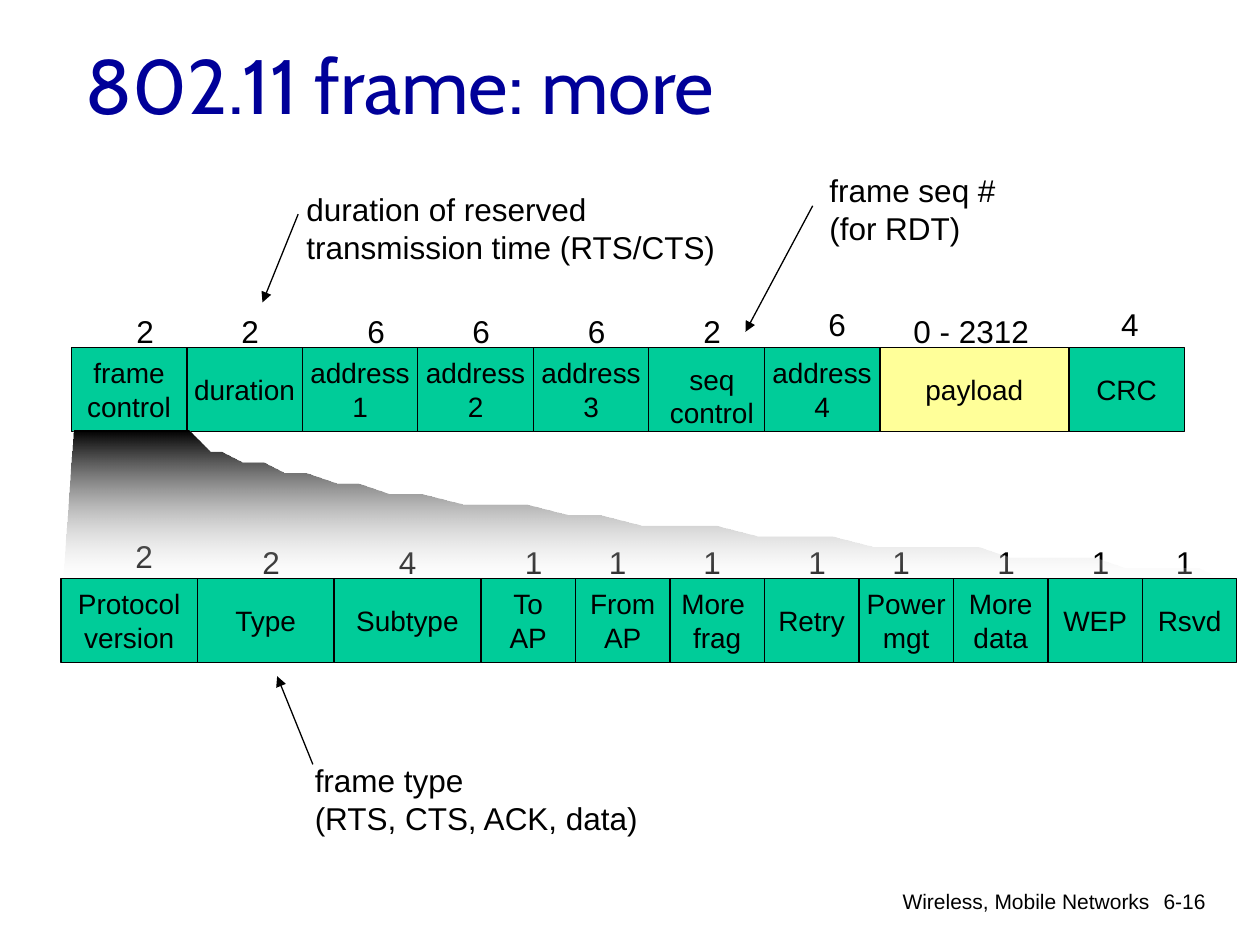
from collections import namedtuple
from dataclasses import dataclass

import lxml.etree
import pptx
import pptx.dml.color
import pptx.enum.shapes
import pptx.enum.text
import pptx.oxml
import pptx.oxml.ns
import pptx.util

ALIGN = pptx.enum.text.PP_ALIGN
ANCHOR = pptx.enum.text.MSO_ANCHOR


@dataclass(frozen=True)
class Theme:
    ink: str = "000000"
    paper: str = "FFFFFF"
    title: str = "000099"
    field: str = "00CC99"
    payload: str = "FFFF99"
    body_font: str = "Arial"
    title_font: str = "Cabin"
    title_size: int = 44
    note_size: int = 18
    field_size: int = 16
    footer_size: int = 12
    line_width: float = 0.75


THEME = Theme()
UNIT = 1 / 12  # the slide is a grid of 120 columns by 90 rows
COLUMNS, ROWS = 120, 90
FIELD_ROWS = 8

Box = namedtuple("Box", "left top width height")
# shift and lift move the octet count away from the middle of its field
Field = namedtuple("Field", "name columns count shift lift", defaults=(0.5, 0))

FRAME_FIELDS = [
    Field("frame\ncontrol", 11, "2", 1.5),
    Field("duration", 11, "2"),
    Field("address\n1", 11, "6", 1.5),
    Field("address\n2", 11, "6"),
    Field("address\n3", 11, "6"),
    Field("seq\ncontrol", 11, "2"),
    Field("address\n4", 11, "6", 1.4, 0.6),
    Field("payload", 18, "0 - 2312", -0.3),
    Field("CRC", 11, "4", 0.3, 0.6),
]
CONTROL_FIELDS = [
    Field("Protocol\nversion", 13, "2", 1.4, 0.5),
    Field("Type", 13, "2"),
    Field("Subtype", 14, "4", 0),
    Field("To\nAP", 9, "1"),
    Field("From\nAP", 9, "1", -0.5),
    Field("More \nfrag", 9, "1", -0.5),
    Field("Retry", 9, "1"),
    Field("Power\nmgt", 9, "1", -0.5),
    Field("More\ndata", 9, "1"),
    Field("WEP", 9, "1"),
    Field("Rsvd", 9, "1", -0.5),
]


def grid(units):
    return pptx.util.Inches(units * UNIT)


def colour(value):
    return pptx.dml.color.RGBColor.from_string(value)


def write(shape, text, size, align=ALIGN.LEFT, anchor=ANCHOR.TOP,
          font=THEME.body_font, ink=THEME.ink, wrap=False):
    frame = shape.text_frame
    frame.text = text
    frame.word_wrap = wrap
    frame.vertical_anchor = anchor
    for para in frame.paragraphs:
        para.alignment = align
        for span in para.runs:
            span.font.size = pptx.util.Pt(size)
            span.font.name = font
            span.font.color.rgb = colour(ink)


def add_text(page, box, text, size, **style):
    write(page.shapes.add_textbox(*map(grid, box)), text, size, **style)


def add_arrow(page, start, end):
    line = page.shapes.add_connector(
        pptx.enum.shapes.MSO_CONNECTOR.STRAIGHT, *map(grid, start + end))
    line.line.color.rgb = colour(THEME.ink)
    line.line.width = pptx.util.Pt(THEME.line_width)
    head = lxml.etree.SubElement(line.line._get_or_add_ln(), pptx.oxml.ns.qn("a:tailEnd"))
    head.set("type", "triangle")
    lxml.etree.SubElement(line._element.spPr, pptx.oxml.ns.qn("a:effectLst"))


def add_field(page, box, field):
    cell = page.shapes.add_shape(
        pptx.enum.shapes.MSO_SHAPE.RECTANGLE, *map(grid, box))
    cell.shadow.inherit = False
    cell.fill.solid()
    cell.fill.fore_color.rgb = colour(
        THEME.payload if field.name == "payload" else THEME.field)
    cell.line.color.rgb = colour(THEME.ink)
    cell.line.width = pptx.util.Pt(THEME.line_width)
    if field.name.startswith("seq"):  # this name stands in its own, lower box
        name_box = Box(box.left + 0.8, box.top + 0.8, 10.4, 7.7)
        add_text(page, name_box, field.name, THEME.field_size, align=ALIGN.CENTER)
    else:
        write(cell, field.name, THEME.field_size, ALIGN.CENTER, ANCHOR.MIDDLE)


def add_field_row(page, left, top, fields):
    """Fields side by side, each with its size above it."""
    for field in fields:
        box = Box(left, top, field.columns, FIELD_ROWS)
        add_field(page, box, field)
        width = 4 if len(field.count) == 1 else 13.4
        middle = left + field.columns / 2 + field.shift
        count_box = Box(middle - width / 2, top - 4 - field.lift, width, 4.8)
        add_text(page, count_box, field.count, THEME.note_size, align=ALIGN.CENTER)
        left += field.columns


def curve(start, pull_1, pull_2, end, steps=40):
    """Points of a cubic curve after its start."""
    for step in range(1, steps + 1):
        t = step / steps
        weights = ((1 - t) ** 3, 3 * t * (1 - t) ** 2, 3 * t * t * (1 - t), t ** 3)
        yield tuple(sum(w * p[axis] for w, p in zip(weights, (start, pull_1, pull_2, end)))
                    for axis in (0, 1))


def add_zoom_fan(page, box):
    """Fading fan from the control field to its enlarged row."""
    def at(across, down):
        return box.left + across * box.width, box.top + down * box.height

    start, low_left, low_right = at(0.01, 0), at(0, 0.98), at(0.98, 1)
    neck = at(0.106, 0)
    points = [low_left, low_right,
              *curve(low_right, at(1, 0.83), at(0.18, 0.61), neck)]
    builder = page.shapes.build_freeform(*start, scale=grid(1))
    builder.add_line_segments(points, close=True)
    fan = builder.convert_to_shape()
    fan.shadow.inherit = False
    fan.line.fill.background()
    fan.fill.gradient()
    fan.fill.gradient_angle = 270
    for stop, value, place in zip(fan.fill.gradient_stops, (THEME.ink, THEME.paper), (0, 1)):
        stop.color.rgb = colour(value)
        stop.position = place
    last_colour = fan._element.spPr.findall(".//" + pptx.oxml.ns.qn("a:srgbClr"))[-1]
    lxml.etree.SubElement(last_colour, pptx.oxml.ns.qn("a:alpha")).set("val", "18000")


def add_callout(page, box, text, start, end):
    add_text(page, box, text, THEME.note_size)
    add_arrow(page, start, end)


def add_footer(page, box):
    add_text(page, Box(box.left, box.top, 50.6, box.height), "Wireless, Mobile Networks",
             THEME.footer_size, align=ALIGN.RIGHT, wrap=True)
    add_text(page, Box(box.left + box.width - 8.9, box.top, 8.9, box.height), "6-16",
             THEME.footer_size, align=ALIGN.RIGHT, wrap=True)


def main():
    deck = pptx.Presentation()
    deck.slide_width, deck.slide_height = grid(COLUMNS), grid(ROWS)
    page = deck.slides.add_slide(deck.slide_layouts[6])

    # Footer and the two field rows
    add_footer(page, Box(60.1, 84, 55.9, 4.2))
    add_field_row(page, 6.8, 33.1, FRAME_FIELDS)
    add_field_row(page, 5.8, 55.1, CONTROL_FIELDS)
    add_zoom_fan(page, Box(5.7, 41.3, 114.3, 14))

    # Notes with arrows to their fields
    add_callout(page, Box(28, 17.5, 41.8, 8.5),
                "duration of reserved\ntransmission time (RTS/CTS)", (28.4, 20.4), (25, 28.8))
    add_callout(page, Box(77.8, 15.7, 18.4, 8.5),
                "frame seq #\n(for RDT)", (77.4, 19.6), (71, 31.6))
    add_callout(page, Box(28.8, 71.9, 33.8, 8.4),
                "frame type\n(RTS, CTS, ACK, data)", (29.8, 72.8), (26.4, 64.4))

    # Title
    add_text(page, Box(7, 3, 102, 15), "802.11 frame: more", THEME.title_size,
             font=THEME.title_font, ink=THEME.title, wrap=True)
    deck.save("out.pptx")


if __name__ == "__main__":
    main()
